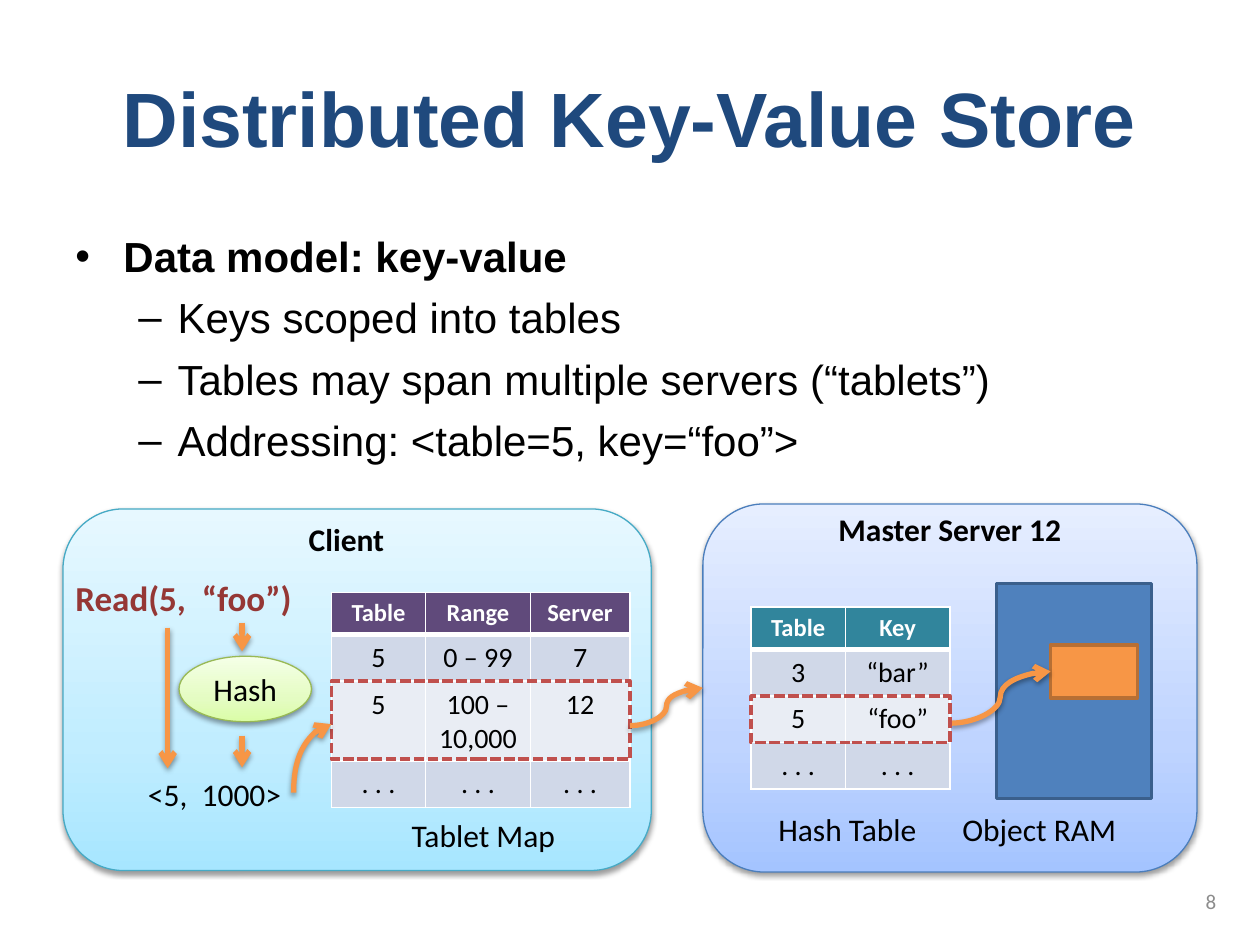
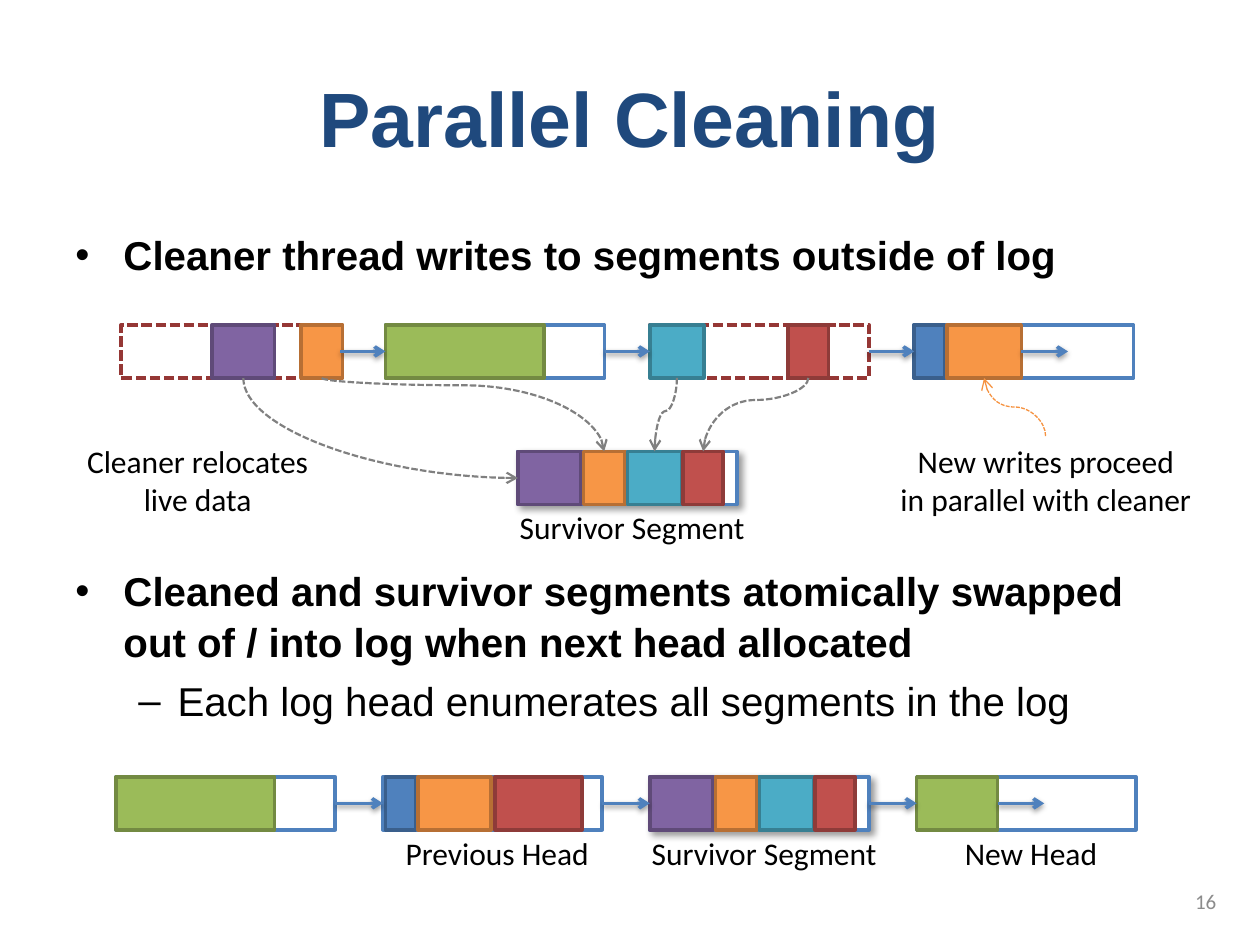
from copy import deepcopy
from dataclasses import dataclass

from lxml.etree import SubElement
from pptx import Presentation
from pptx.dml.color import RGBColor
from pptx.enum.dml import MSO_LINE
from pptx.enum.shapes import MSO_CONNECTOR, MSO_SHAPE
from pptx.enum.text import MSO_ANCHOR, PP_ALIGN
from pptx.oxml.ns import qn
from pptx.util import Cm, Pt


class Theme:
    heading_font, label_font = "Arial", "Calibri"
    title, text, number, call = "1F497D", "000000", "8C8C8C", "953735"
    white, highlight, arrow, grey, new_write = "FFFFFF", "C0504D", "F79646", "808080", "F69240"
    title_size, label_size, call_size, number_size = 44, 18, 20, 12
    header_size, cell_size = 14, 16
    # fill and line
    blue, purple, orange = ("4F81BD", "3A5F8C"), ("8064A2", "5F4A78"), ("F79646", "B76F34")
    green, teal, red = ("9BBB59", "738A42"), ("4BACC6", "377F92"), ("C0504D", "8E3B39")
    open_segment, cleaned_segment = ("FFFFFF", "4F81BD"), ("FFFFFF", "953735")
    # gradient stops from bottom to top, and line
    client = (("A7E6FF", "C1EDFF", "E7F8FF"), "46AAC5")
    master = (("A4C4FF", "BFD4FF", "E6EEFF"), "4B7EBC")
    hash = (("DAFDA7", "E4FCC2", "F5FFE7"), "98B955")
    tablet_header, hash_header, bands = "604A7B", "31859C", ("E9EDF4", "D0D8E8")
    # opacity in percent, blur, distance, direction
    soft_shadow, survivor_shadow = (38, 3.1, 1.6, 90), (40, 4, 3, 45)


@dataclass
class Box:
    """A region in centimetres."""
    left: float
    top: float
    width: float = 0
    height: float = 0

    def at(self, x, y, width=0, height=0):
        return Box(self.left + x, self.top + y, width, height)

    def point(self, x, y):
        return Cm(self.left + x), Cm(self.top + y)

    def lengths(self):
        return Cm(self.left), Cm(self.top), Cm(self.width), Cm(self.height)


def rgb(value):
    return RGBColor.from_string(value)


# ---- shared drawing helpers ----
def set_shadow(properties, shadow):
    effects = properties.find(qn("a:effectLst"))
    if effects is None:
        effects = SubElement(properties, qn("a:effectLst"))
    if shadow:
        opacity, blur, distance, direction = shadow
        outer = SubElement(effects, qn("a:outerShdw"), blurRad=str(Pt(blur)), dist=str(Pt(distance)),
                           dir=str(direction * 60000), rotWithShape="0")
        color = SubElement(outer, qn("a:srgbClr"), val="000000")
        SubElement(color, qn("a:alpha"), val=str(opacity * 1000))


def write(frame, lines, size=Theme.label_size, color=Theme.text, bold=False, align=PP_ALIGN.CENTER,
          font=Theme.label_font):
    for index, line in enumerate(lines):
        paragraph = frame.add_paragraph() if index else frame.paragraphs[0]
        paragraph.text, paragraph.alignment = line, align
        paragraph.font.name, paragraph.font.size = font, Pt(size)
        paragraph.font.bold, paragraph.font.color.rgb = bold, rgb(color)


def add_text(slide, box, *lines, anchor=MSO_ANCHOR.TOP, wrap=True, flush=False, **style):
    frame = slide.shapes.add_textbox(*box.lengths()).text_frame
    frame.word_wrap, frame.vertical_anchor = wrap, anchor
    if flush:
        frame.margin_left = frame.margin_right = frame.margin_top = frame.margin_bottom = 0
    write(frame, lines, **style)
    return frame


def add_block(slide, box, colors, kind=MSO_SHAPE.RECTANGLE, width=2, dashed=False, shadow=None):
    """Colors are a fill (None, one colour or three gradient stops) and a line."""
    fill, line = colors
    shape = slide.shapes.add_shape(kind, *box.lengths())
    if fill is None:
        shape.fill.background()
    elif isinstance(fill, str):
        shape.fill.solid()
        shape.fill.fore_color.rgb = rgb(fill)
    else:
        shape.fill.gradient()
        shape.fill.gradient_angle = 90
        stops = shape.element.spPr.find(".//" + qn("a:gsLst"))
        stops.insert(1, deepcopy(stops[0]))
        for stop, position, color in zip(shape.fill.gradient_stops, (0, 0.35, 1), fill):
            stop.position, stop.color.rgb = position, rgb(color)
    shape.line.color.rgb, shape.line.width = rgb(line), Pt(width)
    if dashed:
        shape.line.dash_style = MSO_LINE.SQUARE_DOT
    shape.shadow.inherit = False
    set_shadow(shape.element.spPr, shadow)
    return shape


def add_panel(slide, box, colors, kind=MSO_SHAPE.ROUNDED_RECTANGLE):
    return add_block(slide, box, colors, kind, width=0.75, shadow=Theme.soft_shadow)


def add_arrow(slide, start, end, color=Theme.arrow, width=3, kind=MSO_CONNECTOR.STRAIGHT,
              dashed=False, shadow=Theme.soft_shadow):
    arrow = slide.shapes.add_connector(kind, *start, *end)
    arrow.line.color.rgb, arrow.line.width = rgb(color), Pt(width)
    if dashed:
        arrow.line.dash_style = MSO_LINE.SQUARE_DOT
    SubElement(arrow.line._get_or_add_ln(), qn("a:tailEnd"), type="arrow")
    set_shadow(arrow.element.spPr, shadow)
    return arrow


def add_upright_curve(slide, start, end, bend=None, **style):
    """A curve that leaves its start vertically; without a bend it is a quarter turn."""
    (x1, y1), (x2, y2) = start, end
    x, y, dx, dy = (x1 + x2) // 2, (y1 + y2) // 2, (x2 - x1) // 2, (y2 - y1) // 2
    curve = add_arrow(slide, (x - dy, y + dx), (x + dy, y - dx), kind=MSO_CONNECTOR.CURVE, **style)
    properties = curve.element.spPr
    properties.find(qn("a:xfrm")).set("rot", str(90 * 60000))
    geometry = properties.find(qn("a:prstGeom"))
    if bend is None:
        geometry.set("prst", "curvedConnector2")
    else:
        SubElement(geometry.find(qn("a:avLst")), qn("a:gd"), name="adj1", fmla=f"val {round(bend * 100000)}")


def top_middle(shape):
    return shape.left + shape.width // 2, shape.top


def bottom_middle(shape):
    return shape.left + shape.width // 2, shape.top + shape.height


def left_middle(shape):
    return shape.left, shape.top + shape.height // 2


def add_bullets(slide, box, size, items):
    """Items are (level, text); the upper level is bold."""
    frame = add_text(slide, box, *(text for _, text in items), size=size, align=PP_ALIGN.LEFT,
                     font=Theme.heading_font)
    for paragraph, (level, _) in zip(frame.paragraphs, items):
        margin, indent, mark = ((0.97, -0.97, "•"), (2.06, -0.79, "–"))[level]
        paragraph.level, paragraph.font.bold = level, level == 0
        paragraph.line_spacing, paragraph.space_before = 1.07, Pt(size * 0.18)
        properties = paragraph._p.get_or_add_pPr()
        properties.set("marL", str(Cm(margin)))
        properties.set("indent", str(Cm(indent)))
        SubElement(properties, qn("a:buFont"), typeface=Theme.heading_font)
        SubElement(properties, qn("a:buChar"), char=mark)


def start_slide(presentation, title, number):
    slide = presentation.slides.add_slide(presentation.slide_layouts[6])
    add_text(slide, Box(1.27, 0.76, 22.86, 3.18), title, anchor=MSO_ANCHOR.MIDDLE, bold=True,
             size=Theme.title_size, color=Theme.title, font=Theme.heading_font)
    add_text(slide, Box(18.84, 17.65, 5.93, 1.02), number, anchor=MSO_ANCHOR.MIDDLE,
             size=Theme.number_size, color=Theme.number, align=PP_ALIGN.RIGHT)
    return slide


# ---- key-value store ----
def add_lookup_table(slide, corner, header, widths, heights, rows, marked=2):
    frame = slide.shapes.add_table(len(rows), len(widths), *corner.at(0, 0, sum(widths), sum(heights)).lengths())
    table = frame.table
    table.horz_banding = False
    for column, width in zip(table.columns, widths):
        column.width = Cm(width)
    for r, (row, height) in enumerate(zip(rows, heights)):
        table.rows[r].height = Cm(height)
        for c, text in enumerate(row):
            cell = table.cell(r, c)
            cell.fill.solid()
            cell.fill.fore_color.rgb = rgb(Theme.bands[r % 2] if r else header)
            write(cell.text_frame, [text], bold=r == 0, size=Theme.cell_size if r else Theme.header_size,
                  color=Theme.text if r else Theme.white)
            add_borders(cell, top=3 if r == 1 else 1, bottom=1 if r else 3)
    # dashed frame round the matching row
    mark = corner.at(0, sum(heights[:marked]), sum(widths), heights[marked])
    add_block(slide, mark, (None, Theme.highlight), dashed=True)


def add_borders(cell, top, bottom):
    properties = cell._tc.get_or_add_tcPr()
    for index, (side, width) in enumerate((("L", 1), ("R", 1), ("T", top), ("B", bottom))):
        line = SubElement(properties, qn(f"a:ln{side}"), w=str(Pt(width)))
        fill = SubElement(line, qn("a:solidFill"))
        SubElement(fill, qn("a:srgbClr"), val=Theme.white)
        properties.insert(index, line)


def add_master_server(slide, box):
    add_panel(slide, box, Theme.master)
    add_text(slide, box.at(0, 0.13, box.width, 0.76), "Master Server 12", bold=True, flush=True)
    add_block(slide, box.at(5.92, 1.6, 3.12, 4.34), Theme.blue)
    add_text(slide, box.at(1.27, 6.05, 3.48, 1.02), "Hash Table", align=PP_ALIGN.LEFT)
    add_text(slide, box.at(4.98, 6.05, 4.04, 1.02), "Object RAM", align=PP_ALIGN.LEFT)
    stored_object = add_block(slide, box.at(7.01, 2.84, 1.75, 1.07), Theme.orange)
    add_arrow(slide, box.point(4.98, 4.42), left_middle(stored_object), kind=MSO_CONNECTOR.CURVE)
    add_lookup_table(slide, box.at(0.97, 2.08), Theme.hash_header, (1.9, 2.11), (0.85, 0.94, 0.94, 0.94),
                     (("Table", "Key"), ("3", "“bar”"), ("5", "“foo”"), (". . .", ". . .")))


def add_client(slide, box):
    add_panel(slide, box, Theme.client)
    add_text(slide, box.at(0, 0.23, 11.43, 0.76), "Client", bold=True, flush=True)
    # from the call to the hashed key
    add_text(slide, box.at(0, 1.24, 6.3, 1.12), "Read(5,  “foo”)", bold=True, size=Theme.call_size,
             color=Theme.call, align=PP_ALIGN.LEFT)
    for x, top, bottom in ((3.61, 2.29, 2.87), (3.61, 4.57, 5.21), (2.11, 2.39, 5.23)):
        add_arrow(slide, box.point(x, top), box.point(x, bottom))
    hash_step = add_panel(slide, box.at(2.34, 2.97, 2.67, 1.32), Theme.hash, MSO_SHAPE.OVAL)
    write(hash_step.text_frame, ["Hash"])
    add_text(slide, box.at(-0.43, 5.23, 5.08, 1.02), "<5,  1000>", align=PP_ALIGN.RIGHT)
    # tablet map
    add_lookup_table(slide, box.at(5.41, 1.68), Theme.tablet_header, (1.9, 2.11, 2.01), (0.85, 0.94, 1.57, 0.94),
                     (("Table", "Range", "Server"), ("5", "0 – 99", "7"), ("5", "100 – 10,000", "12"),
                      (". . .", ". . .", ". . .")))
    add_upright_curve(slide, box.point(4.65, 5.72), box.point(5.41, 4.34))
    add_text(slide, box.at(6.15, 6.07, 4.65, 1.02), "Tablet Map")


def build_store_slide(presentation):
    slide = start_slide(presentation, "Distributed Key-Value Store", "8")
    add_bullets(slide, Box(1.27, 4.45, 22.86, 5.4), 24, (
        (0, "Data model: key-value"),
        (1, "Keys scoped into tables"),
        (1, "Tables may span multiple servers (“tablets”)"),
        (1, "Addressing: <table=5, key=“foo”>")))
    client, master = Box(1.27, 10.26, 11.86, 7.29), Box(14.17, 10.16, 9.96, 7.42)
    add_master_server(slide, master)
    add_client(slide, client)
    add_arrow(slide, client.point(11.43, 4.37), master.point(0, 3.71), kind=MSO_CONNECTOR.CURVE)


# ---- log cleaning ----
SEGMENT_WIDTH, SEGMENT_HEIGHT = 4.42, 1.07
SURVIVORS = ((0, 1.27, Theme.purple), (1.32, 0.84, Theme.orange),
             (2.21, 1.09, Theme.teal), (3.33, 0.81, Theme.red))


def add_segment(slide, corner, entries, cleaned=False, survivor=False, caption=None):
    """Entries are (offset, width, colours). Returns the outline and the entries' shapes."""
    outline = add_block(slide, corner.at(0, 0, SEGMENT_WIDTH, SEGMENT_HEIGHT),
                        Theme.cleaned_segment if cleaned else Theme.open_segment,
                        dashed=cleaned, shadow=Theme.survivor_shadow if survivor else None)
    blocks = [add_block(slide, corner.at(x, 0, width, SEGMENT_HEIGHT), colors) for x, width, colors in entries]
    if caption:
        add_text(slide, corner.at(-0.25, 1.02, 5.11, 1.02), caption, wrap=False)
    return outline, blocks


def add_log(slide, corner, pitch, segments):
    """Linked segments; the last one is the head, with an arrow where writing goes on."""
    style = dict(color=Theme.blue[0], width=2)
    log = [add_segment(slide, corner.at(index * pitch, 0), **segment) for index, segment in enumerate(segments)]
    for (before, _), (after, _) in zip(log, log[1:]):
        link = add_arrow(slide, left_middle(before), left_middle(after), kind=MSO_CONNECTOR.CURVE, **style)
        link.begin_connect(before, 3)
        link.end_connect(after, 1)
    last_entry = log[-1][1][-1]
    x, y = left_middle(last_entry)
    x += last_entry.width
    add_arrow(slide, (x, y), (x + Cm(0.94), y), **style).begin_connect(last_entry, 3)
    return [blocks for _, blocks in log]


def add_cleaning(slide, box):
    first, _, third, head = add_log(slide, box, 5.33, (
        dict(entries=((1.83, 1.27, Theme.purple), (3.63, 0.84, Theme.orange)), cleaned=True),
        dict(entries=((0, 3.2, Theme.green),)),
        dict(entries=((0, 1.09, Theme.teal), (2.79, 0.81, Theme.red)), cleaned=True),
        dict(entries=((0, 0.61, Theme.blue), (0.66, 1.5, Theme.orange)))))
    survivor, kept = add_segment(slide, box.at(8, 2.55), SURVIVORS, survivor=True, caption="Survivor Segment")
    # live data moves to the survivor segment
    move = dict(color=Theme.grey, width=1.25, dashed=True, shadow=None)
    add_upright_curve(slide, bottom_middle(first[0]), left_middle(survivor), **move)
    for live, copied, bend in zip((first[1], *third), kept[1:], (0.1, 0.45, 0.3)):
        add_upright_curve(slide, bottom_middle(live), top_middle(copied), bend, **move)
    # remarks
    add_text(slide, box.at(-0.97, 2.24, 5.03, 1.8), "Cleaner relocates", "live data", wrap=False)
    add_text(slide, box.at(15.42, 2.24, 6.45, 1.8), "New writes proceed", "in parallel with cleaner", wrap=False)
    add_upright_curve(slide, box.point(18.64, 2.24), bottom_middle(head[1]), 0.5,
                      color=Theme.new_write, width=0.75, dashed=True, shadow=None)


def build_cleaning_slide(presentation):
    slide = start_slide(presentation, "Parallel Cleaning", "16")
    add_bullets(slide, Box(1.27, 4.45, 22.86, 1.4), 23, (
        (0, "Cleaner thread writes to segments outside of log"),))
    add_bullets(slide, Box(1.27, 11.22, 22.86, 3.9), 23, (
        (0, "Cleaned and survivor segments atomically swapped out of / into log when next head allocated"),
        (1, "Each log head enumerates all segments in the log")))
    add_cleaning(slide, Box(2.44, 6.55))
    # log after the swap
    add_log(slide, Box(2.34, 15.66), 5.38, (
        dict(entries=((0, 3.2, Theme.green),)),
        dict(entries=((0.05, 0.61, Theme.blue), (0.71, 1.47, Theme.orange), (2.26, 1.75, Theme.red)),
             caption="Previous Head"),
        dict(entries=SURVIVORS, survivor=True, caption="Survivor Segment"),
        dict(entries=((0, 1.63, Theme.green),), caption="New Head")))


def main():
    presentation = Presentation()
    presentation.slide_width, presentation.slide_height = Cm(25.4), Cm(19.05)
    build_store_slide(presentation)
    build_cleaning_slide(presentation)
    presentation.save("out.pptx")


if __name__ == "__main__":
    main()
